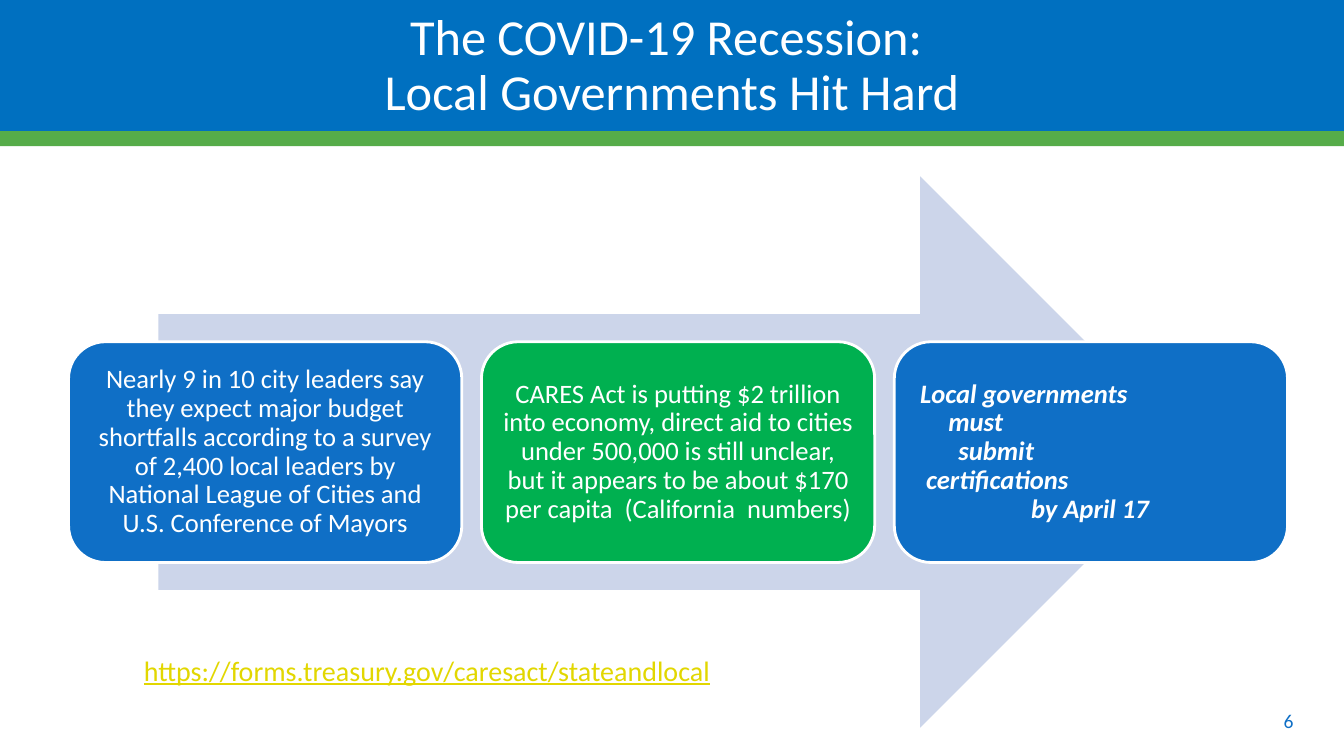
from dataclasses import dataclass

from pptx import Presentation
from pptx.dml.color import RGBColor
from pptx.enum.shapes import MSO_SHAPE
from pptx.enum.text import MSO_ANCHOR, PP_ALIGN
from pptx.util import Inches, Pt


@dataclass(frozen=True)
class Theme:
    font: str = "Calibri"
    white: str = "FFFFFF"
    banner: str = "0070C0"
    stripe: str = "56AC49"
    arrow: str = "CCD5EA"
    blue: str = "0F6FC6"
    green: str = "00B050"
    link: str = "E2D700"
    title_size: int = 36
    link_size: int = 20
    card_size: int = 19
    number_size: int = 14


class SlideBuilder:
    """Places elements by percent of the slide's width and height."""

    def __init__(self, deck, theme):
        self.deck = deck
        self.theme = theme
        self.page = deck.slides.add_slide(deck.slide_layouts[5])

    def place(self, left, top, width, height):
        across, down = self.deck.slide_width / 100, self.deck.slide_height / 100
        return [round(value) for value in
                (left * across, top * down, width * across, height * down)]

    def fill(self, shape, color):
        shape.fill.solid()
        shape.fill.fore_color.rgb = RGBColor.from_string(color)

    def shape(self, kind, area, color, outlined=False):
        shape = self.page.shapes.add_shape(kind, *self.place(*area))
        shape.shadow.inherit = False
        self.fill(shape, color)
        if outlined:
            shape.line.color.rgb = RGBColor.from_string(self.theme.white)
            shape.line.width = Pt(2)
        else:
            shape.line.fill.background()
        return shape

    def frame(self, shape, inset=0.1, vertical_inset=0.05, anchor=MSO_ANCHOR.MIDDLE):
        frame = shape.text_frame
        frame.word_wrap = True
        frame.vertical_anchor = anchor
        frame.margin_left = frame.margin_right = Inches(inset)
        frame.margin_top = frame.margin_bottom = Inches(vertical_inset)
        return frame

    def span(self, para, text, size, color, emphasis=False, underline=False):
        span = para.add_run()
        span.text = text
        span.font.name = self.theme.font
        span.font.size = Pt(size)
        span.font.color.rgb = RGBColor.from_string(color)
        span.font.bold = span.font.italic = emphasis
        span.font.underline = underline

    def title(self, area, lines):
        box = self.page.shapes.title
        box.left, box.top, box.width, box.height = self.place(*area)
        self.fill(box, self.theme.banner)
        frame = self.frame(box)
        frame.margin_top = Inches(0.1)
        para = frame.paragraphs[0]
        para.alignment = PP_ALIGN.CENTER
        para.line_spacing = 0.9
        for index, line in enumerate(lines):
            if index:
                para.add_line_break()
            self.span(para, line, self.theme.title_size, self.theme.white)

    def card(self, area, color, lines):
        """Lines are (text, indent in inches); indent None means centred."""
        box = self.shape(MSO_SHAPE.ROUNDED_RECTANGLE, area, color, outlined=True)
        frame = self.frame(box, 0.08, 0.08)
        for index, (text, indent) in enumerate(lines):
            para = frame.add_paragraph() if index else frame.paragraphs[0]
            para.line_spacing = 0.9
            para.alignment = PP_ALIGN.CENTER
            if indent is not None:
                para.alignment = PP_ALIGN.LEFT
                para._p.get_or_add_pPr().set("marL", str(Inches(indent)))
            self.span(para, text, self.theme.card_size, self.theme.white,
                      emphasis=indent is not None)

    def label(self, area, text, size, color, anchor, underline=False):
        box = self.page.shapes.add_textbox(*self.place(*area))
        para = self.frame(box, anchor=anchor).paragraphs[0]
        para.alignment = PP_ALIGN.CENTER
        self.span(para, text, size, color, underline=underline)


def main():
    deck = Presentation()
    deck.slide_width, deck.slide_height = Inches(13.33), Inches(7.5)
    theme = Theme()
    builder = SlideBuilder(deck, theme)

    # Title banner and stripe
    builder.title((0, -0.4, 100, 17.73),
                  ["The COVID-19 Recession: ", "Local Governments Hit Hard"])
    builder.shape(MSO_SHAPE.RECTANGLE, (0, 17.33, 100, 2), theme.stripe)

    # Arrow behind the cards
    builder.shape(MSO_SHAPE.RIGHT_ARROW, (11.78, 23.33, 77.2, 72.93), theme.arrow)

    # Three cards in equal columns
    cards = [
        (theme.blue, [("Nearly 9 in 10 city leaders say they expect major budget "
                       "shortfalls according to a survey of 2,400 local leaders by "
                       "National League of Cities and U.S. Conference of Mayors", None)]),
        (theme.green, [("CARES Act is putting $2 trillion into economy, direct aid to "
                        "cities under 500,000 is still unclear, but it appears to be "
                        "about $170 per capita  (California  numbers)", None)]),
        (theme.blue, [("Local governments", 0.07), ("must", 0.35), ("submit", 0.45),
                      ("certifications", 0.13), ("by April 17", 1.17)]),
    ]
    first_left, card_width, last_right = 5.1, 29.26, 95.8
    pitch = (last_right - first_left - card_width) / (len(cards) - 1)
    for column, (color, lines) in enumerate(cards):
        builder.card((first_left + column * pitch, 45.2, card_width, 29.2), color, lines)

    # Web address and page number
    builder.label((3.38, 85.73, 56.79, 9.87),
                  "https://forms.treasury.gov/caresact/stateandlocal",
                  theme.link_size, theme.link, MSO_ANCHOR.TOP, underline=True)
    builder.label((92.12, 92.67, 7.5, 5.33), "6",
                  theme.number_size, theme.blue, MSO_ANCHOR.MIDDLE)

    deck.save("out.pptx")


if __name__ == "__main__":
    main()
